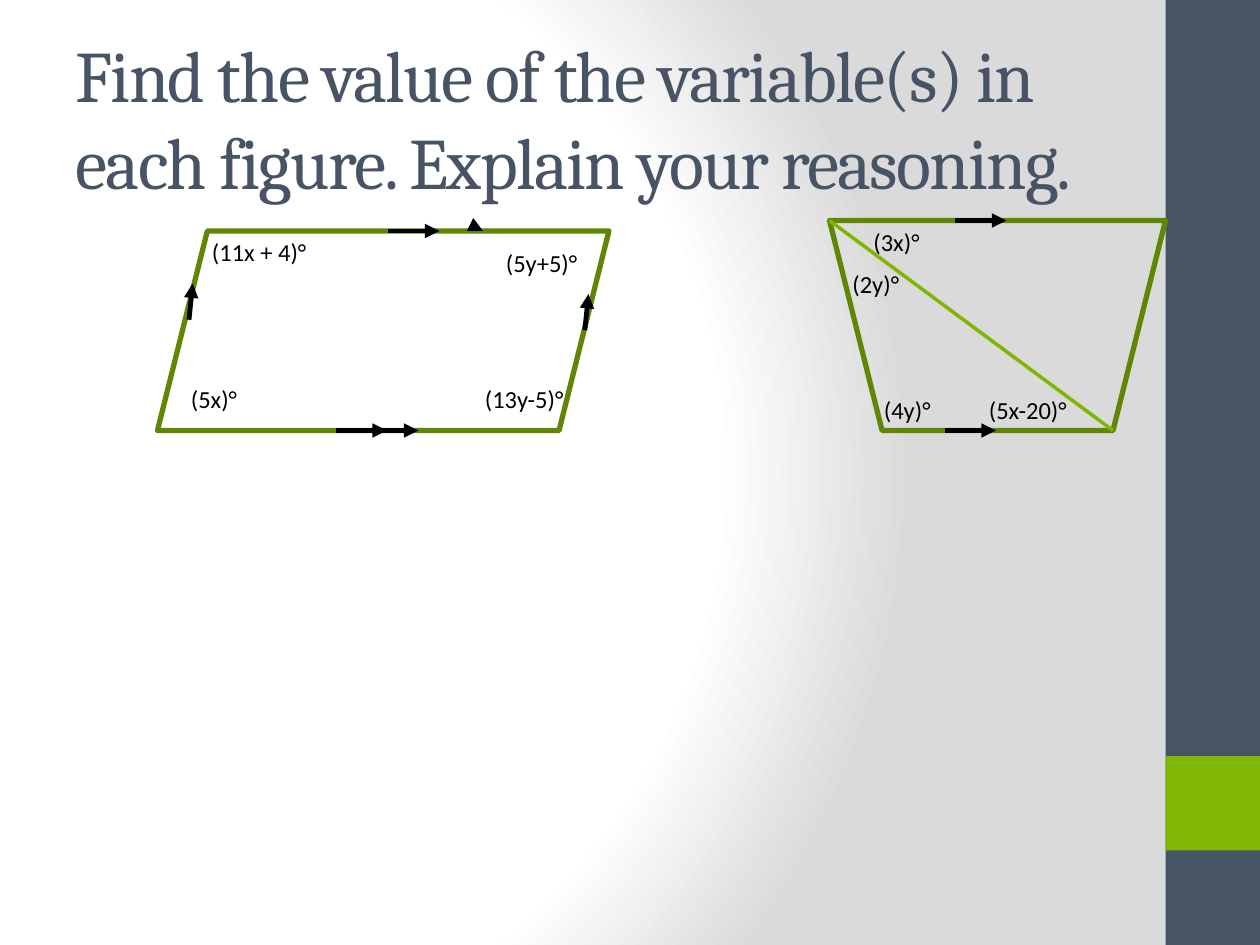
from dataclasses import dataclass

from lxml import etree
from pptx import Presentation
from pptx.dml.color import RGBColor
from pptx.enum.shapes import MSO_CONNECTOR, MSO_SHAPE
from pptx.enum.text import MSO_ANCHOR, MSO_AUTO_SIZE, PP_ALIGN
from pptx.oxml import parse_xml
from pptx.oxml.ns import nsdecls, qn
from pptx.util import Inches, Pt

RECT = MSO_SHAPE.RECTANGLE
SLANT = MSO_SHAPE.PARALLELOGRAM
TRAP = MSO_SHAPE.TRAPEZOID
LINE = MSO_CONNECTOR.STRAIGHT
MIDDLE, TOP = MSO_ANCHOR.MIDDLE, MSO_ANCHOR.TOP
LEFT = PP_ALIGN.LEFT
FIXED, GROW = MSO_AUTO_SIZE.NONE, MSO_AUTO_SIZE.SHAPE_TO_FIT_TEXT

WIDE, HIGH = Inches(10), Inches(7.5)
COLS, ROWS = 120, 90
LABEL_ROWS, ARROW_COLS = 4.04, 4.85


@dataclass(frozen=True)
class Theme:
    slate: str = "465466"
    lime: str = "80B606"
    edge: str = "5F8704"
    cut: str = "7FB602"
    ink: str = "000000"
    white: str = "FFFFFF"
    mist: str = "DADADA"
    head: str = "Cambria"
    body: str = "Calibri"
    head_size: float = 41.4
    body_size: float = 14
    edge_width: float = 3
    cut_width: float = 2
    arrow_width: float = 2.75


@dataclass(frozen=True)
class Box:
    col: float
    row: float
    cols: float
    rows: float

    def place(self) -> dict:
        return {"left": across(self.col), "top": down(self.row),
                "width": across(self.cols), "height": down(self.rows)}


@dataclass(frozen=True)
class Label:
    text: str
    col: float
    row: float
    cols: float
    wrap: bool = True


@dataclass(frozen=True)
class Stroke:
    col: float
    row: float
    to_col: float
    to_row: float


THEME = Theme()
TITLE = "Find the value of the variable(s) in each figure. Explain your reasoning."
BANDS = [(Box(111, 0, 9, 90), THEME.slate), (Box(111, 72, 9, 9), THEME.lime)]
FIGURES = [(SLANT, Box(15, 22, 43, 19), 0), (TRAP, Box(79, 21, 32, 20), 180)]
CUT = Stroke(79, 21, 106, 41)
LABELS = [
    Label("(11x + 4)°", 19, 22, 14),
    Label("(13y-5)°", 45, 36, 10.8),
    Label("(5y+5)°", 47, 23, 12.1),
    Label("(5x)°", 17, 36, 8.4),
    Label("(3x)°", 82, 21, 7.2, False),
    Label("(2y)°", 80, 25, 7.1, False),
    Label("(4y)°", 83, 37, 7.1, False),
    Label("(5x-20)°", 93, 37, 10.3, False),
]
FLAT = [(37, 22), (35, 41), (32, 41), (91, 21), (90, 41)]
ARROWS = [
    Stroke(55.7, 31.45, 56.05, 28),
    Stroke(18, 30.45, 18.35, 27),
    Stroke(45, 21.5, 46, 22),
] + [Stroke(col, row, col + ARROW_COLS, row) for col, row in FLAT]


def across(cols: float) -> int:
    return round(WIDE * cols / COLS)


def down(rows: float) -> int:
    return round(HIGH * rows / ROWS)


def apply(item, values: dict) -> None:
    for name, value in values.items():
        setattr(item, name, value)


def tint(code: str) -> RGBColor:
    return RGBColor.from_string(code)


def write(shape, text: str, font: dict, color: str, frame: dict) -> None:
    apply(shape.text_frame, frame)
    para = shape.text_frame.paragraphs[0]
    para.alignment = LEFT
    run = para.add_run()
    run.text = text
    apply(run.font, font)
    run.font.color.rgb = tint(color)


def paint_back(slide) -> None:
    slide.background.fill.gradient()
    old = slide.element.find(".//" + qn("a:gradFill"))
    stops = [(0, THEME.white), (75, THEME.white), (100, THEME.mist)]
    marks = "".join(
        f'<a:gs pos="{pos * 1000}"><a:srgbClr val="{code}"/></a:gs>'
        for pos, code in stops)
    new = parse_xml(
        f'<a:gradFill {nsdecls("a")} rotWithShape="1"><a:gsLst>{marks}</a:gsLst>'
        '<a:path path="circle">'
        '<a:fillToRect l="20000" t="50000" r="100000" b="50000"/>'
        '</a:path></a:gradFill>')
    old.getparent().replace(old, new)


def add_band(slide, box: Box, color: str) -> None:
    band = slide.shapes.add_shape(RECT, **box.place())
    band.shadow.inherit = False
    band.fill.solid()
    band.fill.fore_color.rgb = tint(color)
    band.line.fill.background()


def add_title(slide) -> None:
    title = slide.shapes.title
    apply(title, Box(6, 3.6, 100, 15).place())
    write(title, TITLE, {"name": THEME.head, "size": Pt(THEME.head_size)},
          THEME.slate,
          {"word_wrap": True, "auto_size": FIXED, "vertical_anchor": MIDDLE})
    title.text_frame.paragraphs[0].runs[0].font._element.set("spc", "-100")


def add_figure(slide, kind, box: Box, turn: float) -> None:
    figure = slide.shapes.add_shape(kind, **box.place())
    figure.rotation = turn
    figure.shadow.inherit = False
    figure.fill.background()
    figure.line.color.rgb = tint(THEME.edge)
    figure.line.width = Pt(THEME.edge_width)


def add_label(slide, label: Label) -> None:
    box = Box(label.col, label.row, label.cols, LABEL_ROWS)
    shape = slide.shapes.add_textbox(**box.place())
    write(shape, label.text, {"name": THEME.body, "size": Pt(THEME.body_size)},
          THEME.ink,
          {"word_wrap": label.wrap, "auto_size": GROW, "vertical_anchor": TOP})


def add_stroke(slide, stroke: Stroke, color: str, width: float,
               arrow: bool = False) -> None:
    line = slide.shapes.add_connector(
        LINE, across(stroke.col), down(stroke.row),
        across(stroke.to_col), down(stroke.to_row))
    line.line.color.rgb = tint(color)
    line.line.width = Pt(width)
    props = line.element.spPr
    etree.SubElement(props, qn("a:effectLst"))
    if arrow:
        etree.SubElement(props.find(qn("a:ln")), qn("a:tailEnd"), type="triangle")


def main() -> None:
    deck = Presentation()
    apply(deck, {"slide_width": WIDE, "slide_height": HIGH})
    slide = deck.slides.add_slide(deck.slide_layouts.get_by_name("Title Only"))
    paint_back(slide)
    for box, color in BANDS:
        add_band(slide, box, color)
    add_title(slide)
    for kind, box, turn in FIGURES:
        add_figure(slide, kind, box, turn)
    add_stroke(slide, CUT, THEME.cut, THEME.cut_width)
    for label in LABELS:
        add_label(slide, label)
    for stroke in ARROWS:
        add_stroke(slide, stroke, THEME.ink, THEME.arrow_width, True)
    deck.save("out.pptx")


if __name__ == "__main__":
    main()
